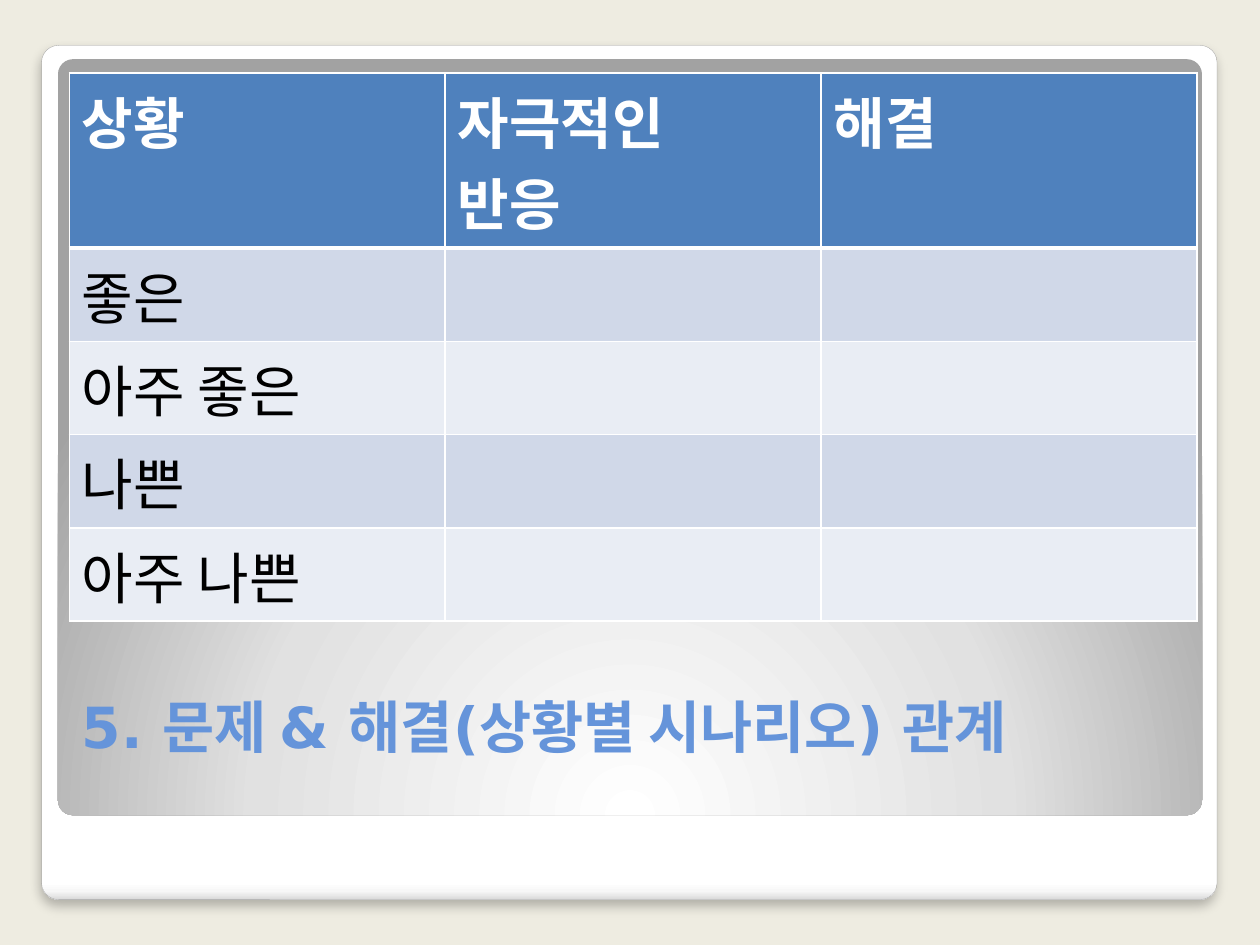
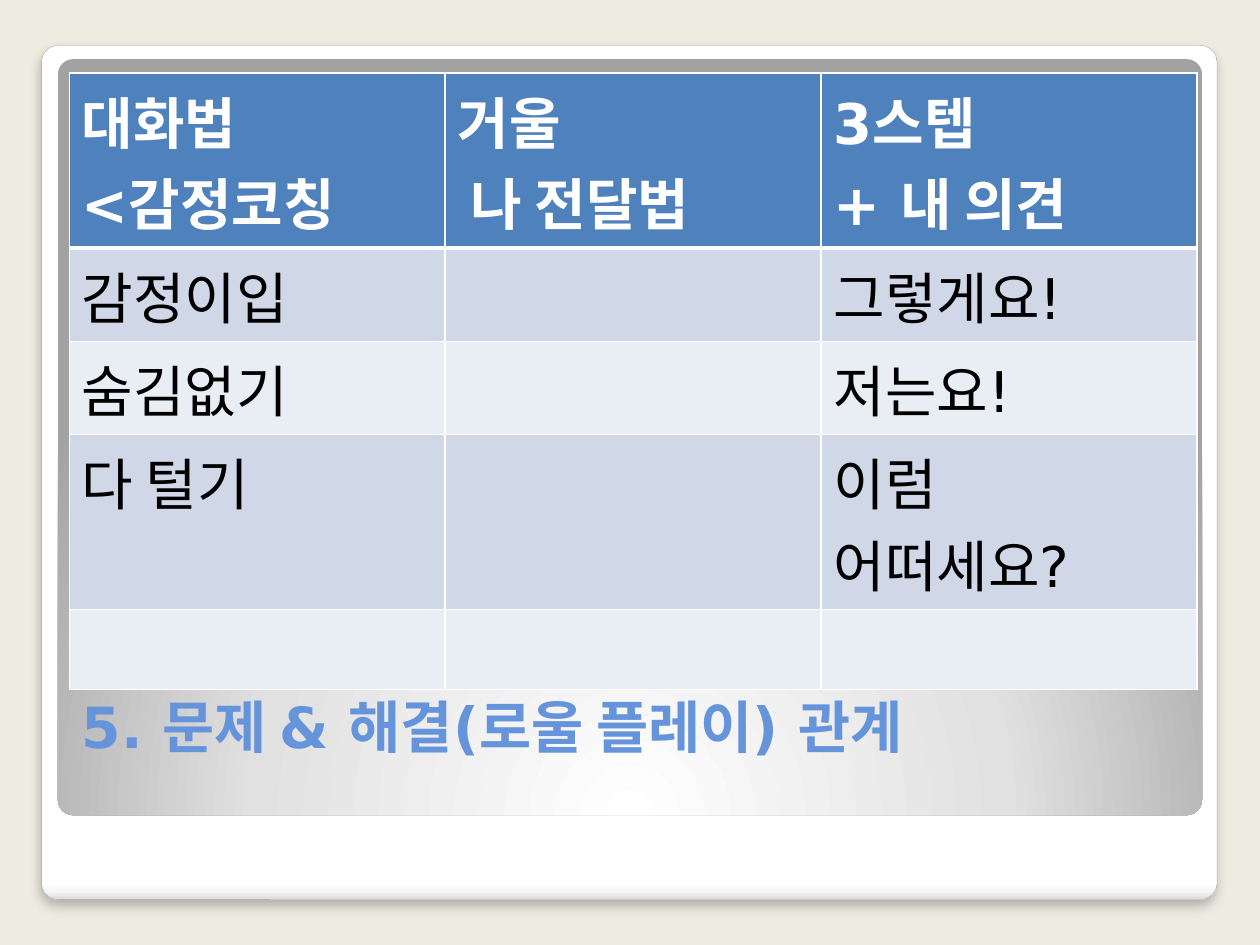
"""Build two table slides about problems, solutions and relationships."""
import lxml.etree
import pptx
import pptx.dml.color
import pptx.enum.shapes
import pptx.enum.text
import pptx.oxml.ns
import pptx.util

Inches = pptx.util.Inches
Pt = pptx.util.Pt
qn = pptx.oxml.ns.qn

FONT = "DejaVu Sans"
COLORS = {
    "background": "EEECE1",
    "white": "FFFFFF",
    "text": "000000",
    "title": "6594DA",
    "header": "4F81BD",
    "band_dark": "D0D8E8",
    "band_light": "E9EDF4",
    "card_line": "A4A4A4",
    "card_shade": "F7F7F7",
    "card_edge": "DADADA",
    "panel_middle": "E1E1E1",
    "panel_edge": "A2A2A2",
}
CARD_STOPS = [(0, "white"), (98, "white"), (99, "card_shade"), (100, "card_edge")]
PANEL_STOPS = [(0, "white"), (55, "panel_middle"), (100, "panel_edge")]
LEFT, WIDTH = 0.55, 8.95
HEADER_HEIGHT, ROW_HEIGHT, TALL_HEIGHT, EMPTY_HEIGHT = 1.39, 0.74, 1.39, 0.62

SCENARIO_ROWS = [
    ["상황", "자극적인\n반응", "해결"],
    ["좋은", "", ""],
    ["아주 좋은", "", ""],
    ["나쁜", "", ""],
    ["아주 나쁜", "", ""],
]
ROLE_PLAY_ROWS = [
    ["대화법\n<감정코칭", "거울\n 나 전달법", "3스텝\n+ 내 의견"],
    ["감정이입", "", "그렇게요!"],
    ["숨김없기", "", "저는요!"],
    ["다 털기", "", "이럼\n어떠세요?"],
    ["", "", ""],
]


def rgb(name):
    """Return the named colour."""
    return pptx.dml.color.RGBColor.from_string(COLORS[name])


def add_xml(parent, tag, **attributes):
    """Append a DrawingML child element with the given attributes."""
    values = {key: str(value) for key, value in attributes.items()}
    return lxml.etree.SubElement(parent, qn(tag), values)


def add_color(parent, name):
    """Append a named colour element."""
    return add_xml(parent, "a:srgbClr", val=COLORS[name])


def style_font(paragraph, size, color, bold):
    """Set the font of a whole paragraph."""
    font = paragraph.font
    font.name, font.size, font.bold = FONT, Pt(size), bold
    font.color.rgb = rgb(color)


def add_frame(slide, left, top, width, height, stops):
    """Add a rounded gradient frame and return it with its gradient element."""
    shape = slide.shapes.add_shape(
        pptx.enum.shapes.MSO_SHAPE.ROUNDED_RECTANGLE,
        Inches(left), Inches(top), Inches(width), Inches(height))
    shape.adjustments[0] = 0.02
    shape.shadow.inherit = False
    shape.line.fill.background()
    shape.fill.gradient()
    gradient = shape.element.spPr.find(qn("a:gradFill"))
    for child in list(gradient):
        gradient.remove(child)
    stop_list = add_xml(gradient, "a:gsLst")
    for position, color in stops:
        add_color(add_xml(stop_list, "a:gs", pos=position * 1000), color)
    return shape, gradient


def add_card(slide):
    """Add the white card with its soft shadow."""
    card, gradient = add_frame(slide, 0.33, 0.36, 9.33, 6.78, CARD_STOPS)
    add_xml(gradient, "a:lin", ang=90 * 60000, scaled=0)
    card.line.color.rgb = rgb("card_line")
    card.line.width = Pt(0.16)
    effects = card.element.spPr.find(qn("a:effectLst"))
    shadow = add_xml(effects, "a:outerShdw", blurRad=Pt(6), dist=Pt(4),
                     dir=90 * 60000, algn="t", rotWithShape=0)
    add_xml(add_color(shadow, "text"), "a:alpha", val=25000)


def add_panel(slide):
    """Add the grey panel that glows from below."""
    gradient = add_frame(slide, 0.46, 0.47, 9.08, 6, PANEL_STOPS)[1]
    glow = add_xml(gradient, "a:path", path="circle")
    add_xml(glow, "a:fillToRect", l=50000, t=175000, r=50000, b=-75000)


def add_title(slide, text):
    """Add the title near the foot of the panel."""
    box = slide.shapes.add_textbox(
        Inches(LEFT), Inches(5.45), Inches(WIDTH), Inches(1.15))
    frame = box.text_frame
    frame.word_wrap = True
    frame.vertical_anchor = pptx.enum.text.MSO_ANCHOR.BOTTOM
    frame.margin_bottom = Inches(0.57)
    frame.text = text
    style_font(frame.paragraphs[0], 32.4, "title", True)


def add_borders(cell, is_header, below_header):
    """Draw white cell borders, heavy beneath the header."""
    properties = cell._tc.get_or_add_tcPr()
    widths = {"L": 1, "R": 1, "T": 3 if below_header else 1,
              "B": 3 if is_header else 1}
    for side, width in widths.items():
        line = add_xml(properties, f"a:ln{side}", w=Pt(width))
        add_color(add_xml(line, "a:solidFill"), "white")


def row_height(index, texts):
    """Return the height that a row needs for its lines."""
    if index == 0:
        return HEADER_HEIGHT
    if not any(texts):
        return EMPTY_HEIGHT
    return TALL_HEIGHT if any("\n" in text for text in texts) else ROW_HEIGHT


def add_banded_table(slide, rows):
    """Add the table with a blue header and alternating bands."""
    heights = [row_height(index, texts) for index, texts in enumerate(rows)]
    table = slide.shapes.add_table(
        len(rows), len(rows[0]), Inches(LEFT), Inches(0.58),
        Inches(WIDTH), Inches(sum(heights))).table
    for index, texts in enumerate(rows):
        table.rows[index].height = Inches(heights[index])
        is_header = index == 0
        band = "header" if is_header else ("band_light", "band_dark")[index % 2]
        for column, text in enumerate(texts):
            cell = table.cell(index, column)
            add_borders(cell, is_header, index == 1)
            cell.fill.solid()
            cell.fill.fore_color.rgb = rgb(band)
            cell.text = text
            for paragraph in cell.text_frame.paragraphs:
                style_font(paragraph, 32, "white" if is_header else "text", is_header)


def add_table_slide(presentation, title, rows):
    """Add one slide with the shared frames, a title and a table."""
    slide = presentation.slides.add_slide(presentation.slide_layouts[6])
    slide.background.fill.solid()
    slide.background.fill.fore_color.rgb = rgb("background")
    add_card(slide)
    add_panel(slide)
    add_title(slide, title)
    add_banded_table(slide, rows)


def main():
    """Build and save the presentation."""
    presentation = pptx.Presentation()
    presentation.slide_width = Inches(10)
    presentation.slide_height = Inches(7.5)
    add_table_slide(presentation, "5. 문제 & 해결(상황별 시나리오) 관계", SCENARIO_ROWS)
    add_table_slide(presentation, "5. 문제 & 해결(로울 플레이) 관계", ROLE_PLAY_ROWS)
    presentation.save("out.pptx")


if __name__ == "__main__":
    main()
